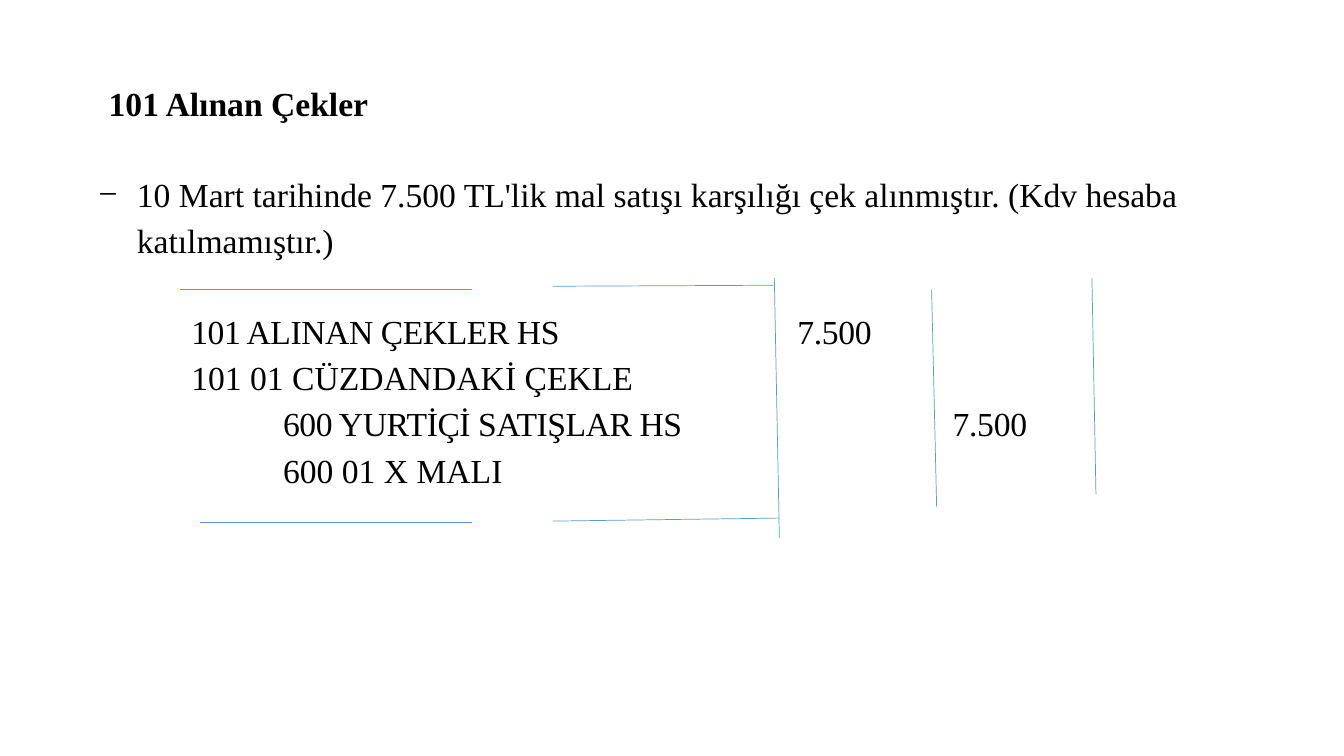
from pptx import Presentation
from pptx.dml.color import RGBColor
from pptx.enum.shapes import MSO_CONNECTOR
from pptx.util import Inches, Pt
from lxml.etree import SubElement
from pptx.oxml.ns import qn

# Content
TITLE = "101 Alınan Çekler"
EXAMPLE = ("10 Mart tarihinde 7.500 TL'lik mal satışı karşılığı çek alınmıştır. "
           "(Kdv hesaba katılmamıştır.)")
# Account line, left indent (in), space before (pt), letter spacing (1/100 pt)
ACCOUNTS = [
    ("101 ALINAN ÇEKLER HS", 0.92, 36.5, -30),
    ("101 01 CÜZDANDAKİ ÇEKLE", 0.92, 3.9, 0),
    ("600 YURTİÇİ SATIŞLAR HS", 1.83, 4.2, -30),
    ("600 01 X MALI", 1.83, 4.2, 0),
]
# Amount, left, top
AMOUNTS = [("7.500", 7.81, 3.04), ("7.500", 9.35, 3.95)]
# Ledger rules: start x, start y, end x, end y
RULES = [
    (1.79, 2.87, 4.68, 2.87),
    (5.48, 2.84, 7.67, 2.83),
    (7.68, 2.76, 7.73, 5.34),
    (1.98, 5.18, 4.68, 5.18),
    (5.48, 5.17, 7.73, 5.14),
    (9.24, 2.87, 9.29, 5.03),
    (10.83, 2.76, 10.87, 4.9),
]
THEME = {
    "font": "Times New Roman",
    "size": Pt(24),
    "text": RGBColor(0, 0, 0),
    "rule": RGBColor(0x5B, 0x9B, 0xD5),
    "rule_width": Pt(0.5),
    "title_gap": 4.5,
}


def add_box(page, left, top, width, height):
    box = page.shapes.add_textbox(*map(Inches, (left, top, width, height)))
    box.text_frame.word_wrap = True
    return box.text_frame


def write(para, text, before, indent=0, hanging=0, bold=False, tracking=0):
    para.space_before = Pt(before)
    props = para._p.get_or_add_pPr()
    props.set("marL", str(Inches(indent)))
    props.set("indent", str(-Inches(hanging)))
    span = para.add_run()
    span.text = text
    span.font.name = THEME["font"]
    span.font.size = THEME["size"]
    span.font.bold = bold
    span.font.color.rgb = THEME["text"]
    if tracking:
        span.font._element.set("spc", str(tracking))


def add_rule(page, ends):
    rule = page.shapes.add_connector(MSO_CONNECTOR.STRAIGHT, *map(Inches, ends))
    rule.line.color.rgb = THEME["rule"]
    rule.line.width = THEME["rule_width"]
    SubElement(rule._element.spPr, qn("a:effectLst"))


def main():
    deck = Presentation()
    deck.slide_width, deck.slide_height = Inches(13.33), Inches(7.5)
    page = deck.slides.add_slide(deck.slide_layouts[6])

    # Heading and example
    body = add_box(page, 0.88, 0.77, 11.7, 4.64)
    write(body.paragraphs[0], TITLE, THEME["title_gap"], indent=0.1, bold=True)
    example = body.add_paragraph()
    example.line_spacing = 1.13
    write(example, EXAMPLE, 33, indent=0.38, hanging=0.38)
    SubElement(example._p.get_or_add_pPr(), qn("a:buFont"), typeface=THEME["font"])
    SubElement(example._p.get_or_add_pPr(), qn("a:buChar"), char="−")

    # Journal entry
    for account, indent, before, tracking in ACCOUNTS:
        write(body.add_paragraph(), account, before, indent, tracking=tracking)
    for amount, left, top in AMOUNTS:
        frame = add_box(page, left, top, 1.3, 0.5)
        write(frame.paragraphs[0], amount, THEME["title_gap"], tracking=-20)

    # Ledger rules
    for ends in RULES:
        add_rule(page, ends)

    deck.save("out.pptx")


if __name__ == "__main__":
    main()
